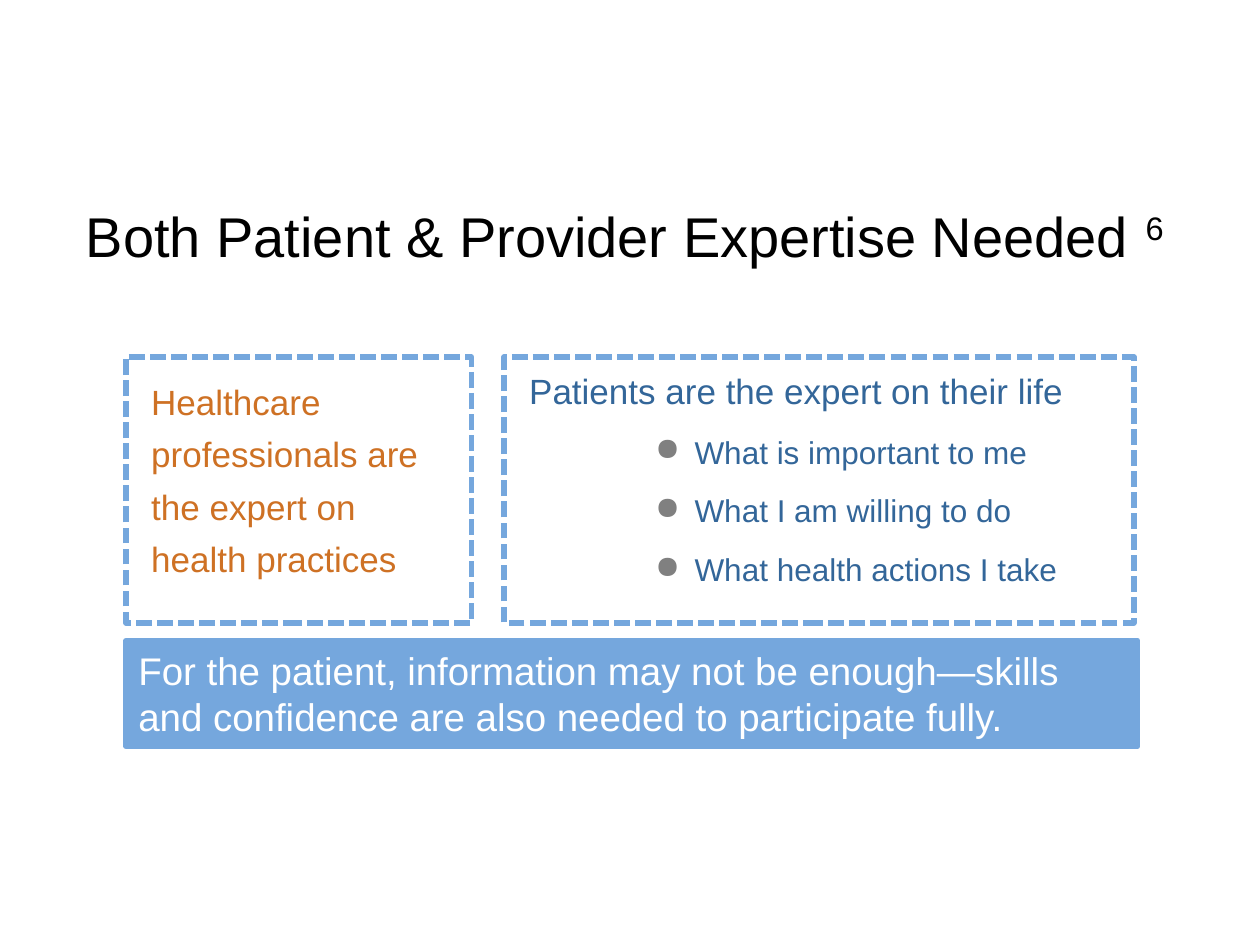
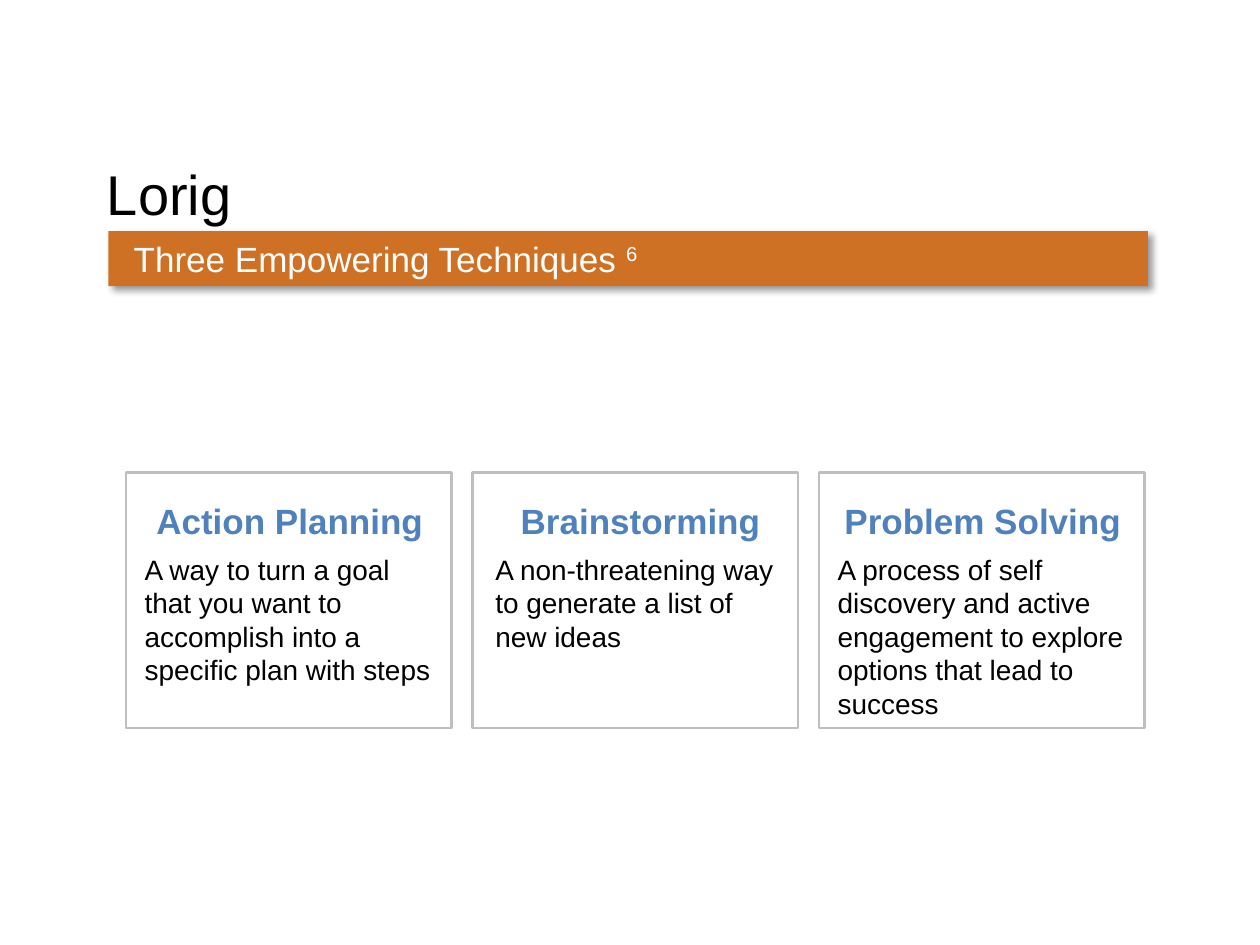
from dataclasses import dataclass
from lxml import etree
from pptx import Presentation
from pptx.dml.color import RGBColor
from pptx.enum import dml, shapes, text
from pptx.oxml import ns
from pptx.util import Pt


@dataclass(frozen=True)
class Theme:
    font: str = "Arial"
    black: str = "000000"
    white: str = "FFFFFF"
    sky: str = "75A7DD"
    navy: str = "336699"
    blue: str = "4F81BD"
    orange: str = "CE7124"
    grey: str = "808080"
    frame: str = "BFBFBF"
    title: int = 32
    lead: int = 22
    head: int = 20
    point: int = 18
    body: int = 16


def node(base, tag, **attrs):
    return etree.SubElement(base, ns.qn(tag), **attrs)


class Deck:
    def __init__(self, theme):
        self.theme = theme
        self.prs = Presentation()
        self.prs.slide_width, self.prs.slide_height = Pt(720), Pt(540)
        self.slide = None

    def start(self, title, left, top, width, note=""):
        """Add a slide with its title."""
        self.slide = self.prs.slides.add_slide(self.prs.slide_layouts[6])
        box = self.label(left, top, width, 66, pad=(7.2, 7.2))
        self.para(box, title, self.theme.title, self.theme.black, note=note)

    def label(self, left, top, width, height, pad=(7.2, 3.6)):
        box = self.slide.shapes.add_textbox(Pt(left), Pt(top), Pt(width), Pt(height))
        self.fit(box, pad)
        return box

    def panel(self, left, top, width, height, fill=None, line=None,
              weight=3, dash=False, pad=(7.2, 3.6)):
        box = self.slide.shapes.add_shape(
            shapes.MSO_SHAPE.RECTANGLE, Pt(left), Pt(top), Pt(width), Pt(height))
        box.shadow.inherit = False
        if fill:
            box.fill.solid()
            box.fill.fore_color.rgb = RGBColor.from_string(fill)
        else:
            box.fill.background()
        if line:
            box.line.color.rgb = RGBColor.from_string(line)
            box.line.width = Pt(weight)
            if dash:
                box.line.dash_style = dml.MSO_LINE.SQUARE_DOT
        else:
            box.line.fill.background()
        self.fit(box, pad)
        return box

    def fit(self, box, pad):
        """Set wrapping and insets: pad is (left, top)."""
        frame = box.text_frame
        frame.word_wrap = True
        frame.vertical_anchor = text.MSO_ANCHOR.TOP
        frame.margin_left, frame.margin_right = Pt(pad[0]), Pt(7.2)
        frame.margin_top = frame.margin_bottom = Pt(pad[1])

    def para(self, box, words, size, color, bold=False, note="",
             center=False, before=0, after=0, pitch=None):
        """Add a paragraph; note is a raised mark at its end."""
        frame = box.text_frame
        para = frame.paragraphs[0] if not frame.text else frame.add_paragraph()
        para.text = words
        if note:
            mark = para.add_run()
            mark.text = note
            mark._r.get_or_add_rPr().set("baseline", "30000")
        para.alignment = text.PP_ALIGN.CENTER if center else text.PP_ALIGN.LEFT
        para.space_before, para.space_after = Pt(before), Pt(after)
        if pitch:
            para.line_spacing = Pt(pitch)
        for run in para.runs:
            run.font.name, run.font.size = self.theme.font, Pt(size)
            run.font.bold = bold
            run.font.color.rgb = RGBColor.from_string(color)
        return para

    def bullet(self, box, words, size, color):
        para = self.para(box, words, size, color, before=12)
        para.level = 2
        props = para._p.get_or_add_pPr()
        props.set("marL", str(Pt(94.5)))
        props.set("indent", str(-Pt(22.5)))
        node(node(props, "a:buClr"), "a:srgbClr", val=self.theme.grey)
        node(props, "a:buChar", char="●")

    def shade(self, box):
        """Cast a soft shadow to the lower right."""
        effects = box._element.spPr.find(ns.qn("a:effectLst"))
        outer = node(effects, "a:outerShdw", blurRad=str(Pt(4)), dist=str(Pt(3)),
                     dir="2700000", algn="tl", rotWithShape="0")
        tint = node(outer, "a:srgbClr", val=self.theme.black)
        node(tint, "a:alpha", val="40000")


def expertise(deck):
    look = deck.theme
    deck.start("Both Patient & Provider Expertise Needed ", 42, 108, 678, note="6")
    staff, patient = [
        deck.panel(left, 204, width, 152, line=look.sky, dash=True, pad=(14.4, 7.2))
        for left, width in ((72, 197.5), (288, 360))]
    deck.para(staff, "Healthcare professionals are the expert on health practices",
              look.head, look.orange, pitch=30)
    deck.para(patient, "Patients are the expert on their life", look.head, look.navy)
    for point in ("What is important to me", "What I am willing to do",
                  "What health actions I take"):
        deck.bullet(patient, point, look.point, look.navy)
    band = deck.panel(72, 366, 578, 60.5, fill=look.sky, line=look.sky)
    deck.para(band, "For the patient, information may not be enough—skills and "
              "confidence are also needed to participate fully.",
              look.lead, look.white)


def methods(deck):
    look = deck.theme
    deck.start("Lorig", 54, 84, 630)
    band = deck.panel(62, 132, 594, 31.5, fill=look.orange, pad=(14.4, 3.6))
    deck.shade(band)
    deck.para(band, "Three Empowering Techniques ", look.head, look.white, note="6")
    cards = (
        ("Action Planning", 3.6,
         "A way to turn a goal that you want to accomplish into a specific plan with steps"),
        ("Brainstorming", 6,
         "A non-threatening way to generate a list of new ideas"),
        ("Problem Solving", 3.6,
         "A process of self discovery and active engagement to explore options "
         "that lead to success"),
    )
    for place, (name, shift, words) in enumerate(cards):
        left = 72 + 198 * place
        deck.panel(left, 270, 186, 146, line=look.frame, weight=1.5)
        box = deck.label(left + shift, 282, 180, 134)
        deck.para(box, name, look.head, look.blue, bold=True, center=True, after=6)
        deck.para(box, words, look.body, look.black, after=6)


def main():
    deck = Deck(Theme())
    expertise(deck)
    methods(deck)
    deck.prs.save("out.pptx")


if __name__ == "__main__":
    main()
